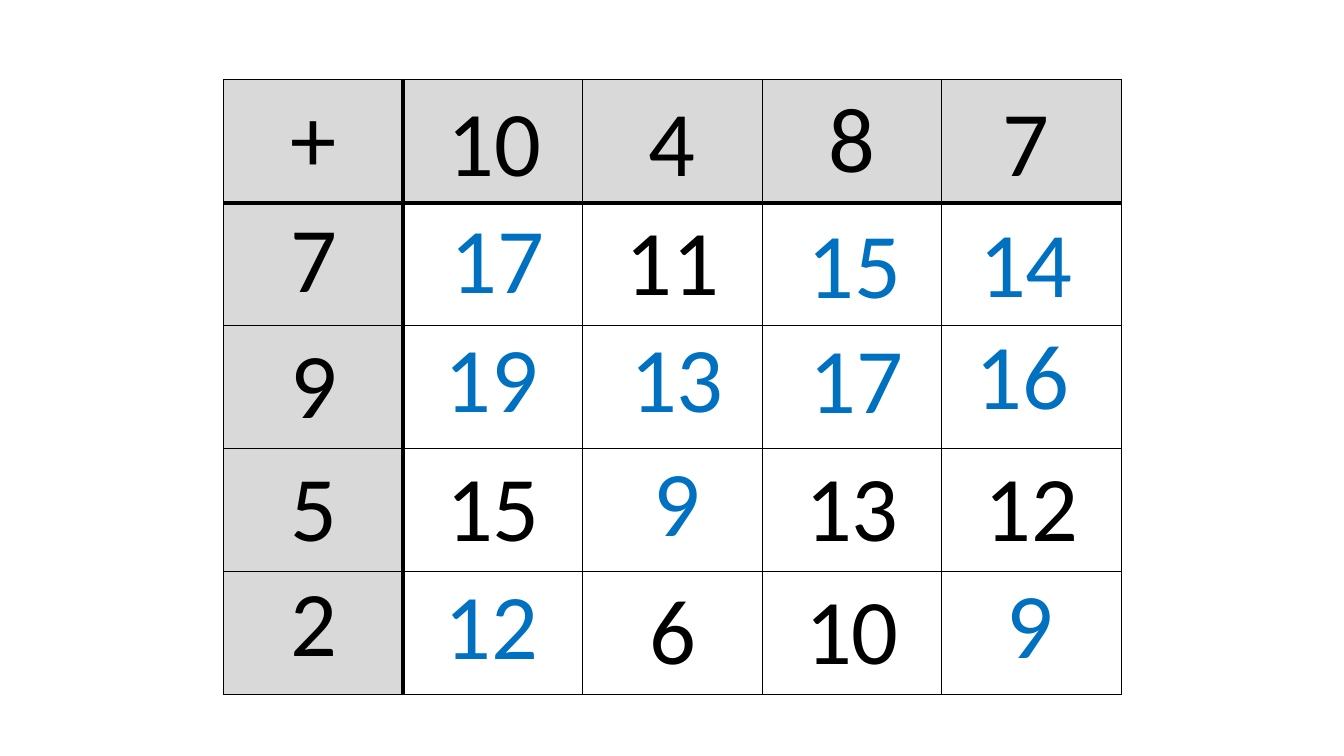
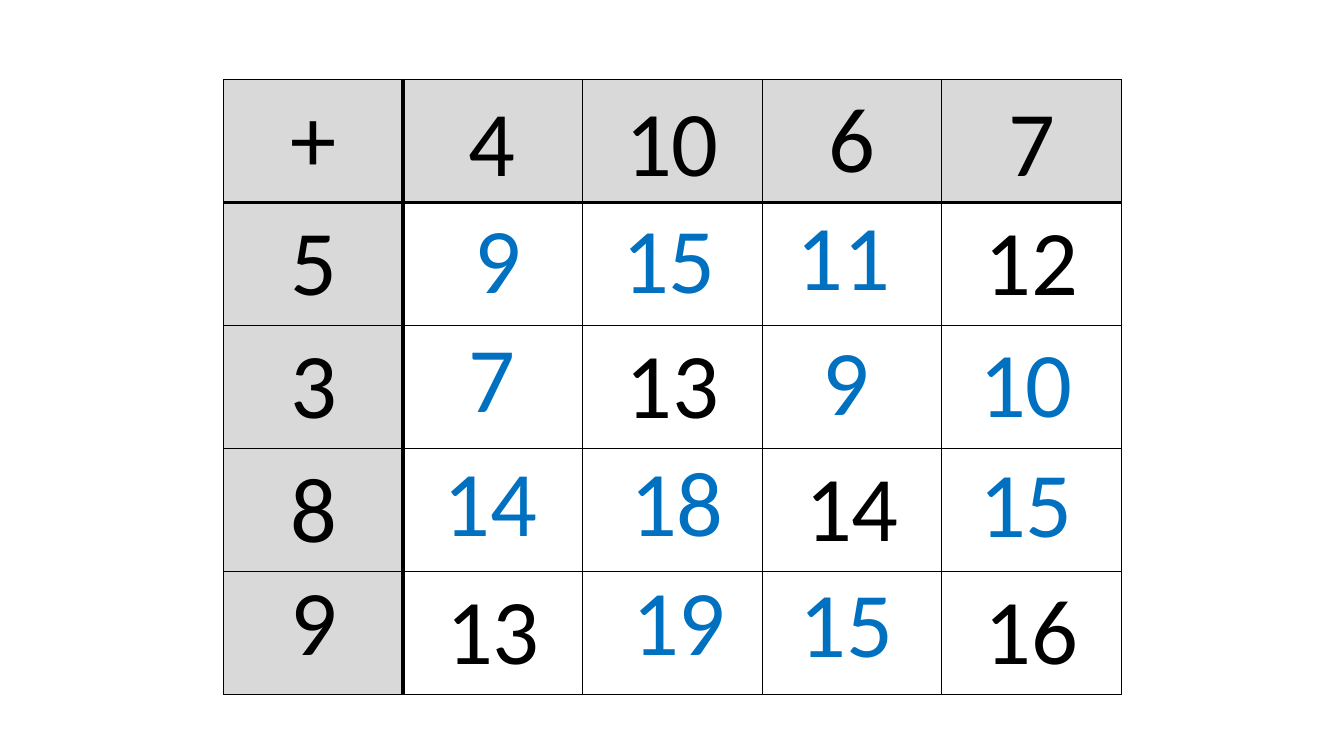
from lxml import etree
from pptx import Presentation
from pptx.dml.color import RGBColor
from pptx.enum.text import MSO_ANCHOR, PP_ALIGN
from pptx.oxml.ns import qn
from pptx.util import Inches, Pt

COLORS = {"text": "000000", "answer": "0070C0", "header": "D9D9D9", "body": "FFFFFF"}
FONT, SIZE = "Calibri", 66
LEFT, TOP, COL_W, ROW_H = 2.22, 0.79, 1.78, 1.22
BOX_W, BOX_H = 1.43, 1.21
THIN, THICK = 1, 3

# A plain string sits in its table cell; (text, left, top) is a movable card.
GRIDS = [
    [
        ["+", ("10", 4.19, 0.79), ("4", 5.95, 0.79), "8", ("7", 9.46, 0.79)],
        [("7", 2.4, 1.94), ("17", 4.22, 1.95), "11", ("15", 7.76, 2), ("14", 9.46, 1.99)],
        ["9", ("19", 4.16, 3.13), ("13", 6, 3.13), ("17", 7.78, 3.14), ("16", 9.43, 3.1)],
        [("5", 2.4, 4.41), "15", ("9", 6, 4.36), "13", "12"],
        [("2", 2.4, 5.55), ("12", 4.16, 5.58), "6", "10", ("9", 9.5, 5.57)],
    ],
    [
        ["+", ("4", 4.16, 0.79), ("10", 5.95, 0.79), "6", ("7", 9.52, 0.79)],
        ["5", ("9", 4.22, 1.95), ("15", 5.92, 1.95), ("11", 7.65, 1.92), "12"],
        ["3", ("7", 4.16, 3.13), "13", ("9", 7.68, 3.16), ("10", 9.46, 3.18)],
        [("8", 2.4, 4.42), ("14", 4.15, 4.36), ("18", 6, 4.36), "14", ("15", 9.46, 4.37)],
        [("9", 2.4, 5.54), "13", ("19", 6.02, 5.54), ("15", 7.68, 5.56), "16"],
    ],
]


def rgb(name):
    return RGBColor.from_string(COLORS[name])


def write(tf, text, color):
    p = tf.paragraphs[0]
    p.text = text
    p.alignment = PP_ALIGN.CENTER
    font = p.runs[0].font
    font.name, font.size = FONT, Pt(SIZE)
    font.color.rgb = rgb(color)


def set_borders(cell, row, col):
    """Rule every edge, with thick lines between the headers and the body."""
    widths = {
        "a:lnL": THICK if col == 1 else THIN,
        "a:lnR": THICK if col == 0 else THIN,
        "a:lnT": THICK if row == 1 else THIN,
        "a:lnB": THICK if row == 0 else THIN,
    }
    tc_pr = cell._tc.get_or_add_tcPr()
    for i, (tag, width) in enumerate(widths.items()):
        ln = etree.Element(qn(tag), w=str(Pt(width)))
        fill = etree.SubElement(ln, qn("a:solidFill"))
        etree.SubElement(fill, qn("a:srgbClr"), val=COLORS["text"])
        tc_pr.insert(i, ln)


def add_card(s, text, left, top, color):
    tf = s.shapes.add_textbox(Inches(left), Inches(top), Inches(BOX_W), Inches(BOX_H)).text_frame
    tf.word_wrap = True
    write(tf, text, color)


def add_addition_grid(s, grid):
    rows, cols = len(grid), len(grid[0])
    table = s.shapes.add_table(rows, cols, Inches(LEFT), Inches(TOP),
                               Inches(COL_W * cols), Inches(ROW_H * rows)).table
    for column in table.columns:
        column.width = Inches(COL_W)
    for r, entries in enumerate(grid):
        table.rows[r].height = Inches(ROW_H)
        for c, entry in enumerate(entries):
            header = r == 0 or c == 0
            cell = table.cell(r, c)
            cell.fill.solid()
            cell.fill.fore_color.rgb = rgb("header" if header else "body")
            cell.vertical_anchor = MSO_ANCHOR.MIDDLE
            set_borders(cell, r, c)
            if isinstance(entry, str):
                write(cell.text_frame, entry, "text")
            else:
                add_card(s, *entry, "text" if header else "answer")


def main():
    prs = Presentation()
    prs.slide_width, prs.slide_height = Inches(13.33), Inches(7.5)
    for grid in GRIDS:
        add_addition_grid(prs.slides.add_slide(prs.slide_layouts[6]), grid)
    prs.save("out.pptx")


if __name__ == "__main__":
    main()
